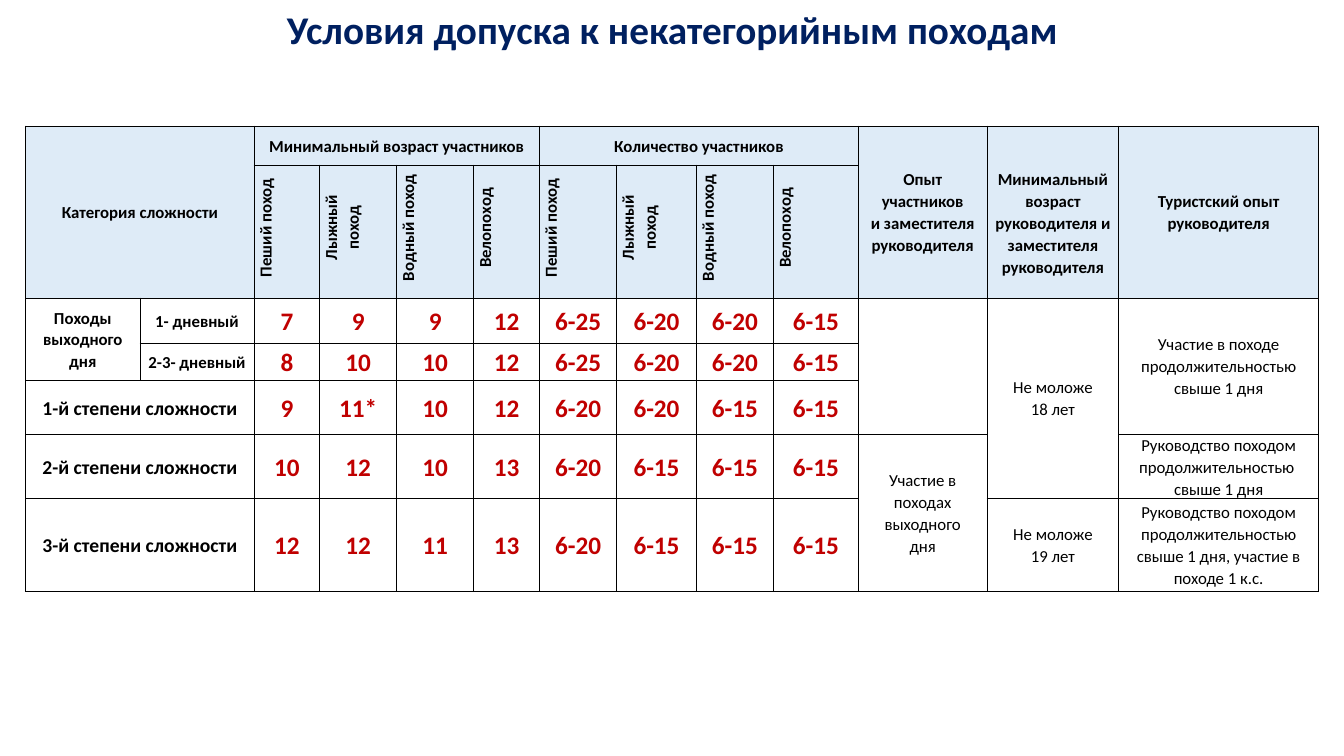
from lxml import etree
from pptx import Presentation
from pptx import util as u
from pptx.dml.color import RGBColor
from pptx.enum import text
from pptx.oxml import ns

NAVY = RGBColor(0x00, 0x20, 0x60)
BLACK = RGBColor(0x00, 0x00, 0x00)
RED = RGBColor(0xC0, 0x00, 0x00)
PALE_BLUE = RGBColor(0xDE, 0xEB, 0xF7)

# Text formats
TITLE = {"name": "Calibri", "size": u.Pt(28), "bold": True}
HEADING = {"name": "Calibri", "size": u.Pt(12), "bold": True}
DEGREE = {**HEADING, "size": u.Pt(14)}
NUMBER = {**HEADING, "size": u.Pt(18)}
NOTE = {**HEADING, "bold": False}

COLUMN_WIDTHS = [81.6, 81.6, 46.8, 55, 55, 47.1, 55, 57.1, 55, 60.7, 91.8, 94.3, 142.5]
ROW_HEIGHTS = [28, 95, 32.4, 26.7, 38.1, 45.4, 66.2]
HEADER_ROWS = 2
FIRST_NUMBER_COLUMN = 2

# Row, column, row span, column span, text (\n: paragraph, \v: line break)
HEADINGS = [
    (0, 0, 2, 2, "Категория сложности"),
    (0, 2, 1, 4, "Минимальный возраст участников"),
    (0, 6, 1, 4, "Количество участников"),
    (0, 10, 2, 1, "Опыт участников\nи заместителя руководителя"),
    (0, 11, 2, 1, "Минимальный возраст руководителя и заместителя руководителя"),
    (0, 12, 2, 1, "Туристский опыт\nруководителя"),
    (2, 0, 2, 1, "Походы выходного дня"),
    (2, 1, 1, 1, "1- дневный"),
    (3, 1, 1, 1, "2-3- дневный"),
]
NOTES = [
    (2, 10, 3, 1, ""),
    (2, 11, 4, 1, "Не моложе\n18 лет"),
    (2, 12, 3, 1, "Участие в походе продолжительностью свыше 1 дня"),
    (5, 10, 2, 1, "Участие в\nпоходах\nвыходного\nдня"),
    (5, 12, 1, 1, "Руководство походом продолжительностью \vсвыше 1 дня"),
    (6, 11, 1, 1, "Не моложе\n19 лет"),
    (6, 12, 1, 1, "Руководство походом продолжительностью свыше 1 дня, "
                  "участие в походе 1 к.с."),
]
HIKE_TYPES = ["Пеший поход", "Лыжный поход", "Водный поход", "Велопоход"]
NUMBERS = [
    ["7", "9", "9", "12", "6-25", "6-20", "6-20", "6-15"],
    ["8", "10", "10", "12", "6-25", "6-20", "6-20", "6-15"],
    ["9", "11*", "10", "12", "6-20", "6-20", "6-15", "6-15"],
    ["10", "12", "10", "13", "6-20", "6-15", "6-15", "6-15"],
    ["12", "12", "11", "13", "6-20", "6-15", "6-15", "6-15"],
]


def write(frame, content, font_format, color, line_spacing=None):
    frame.text = content
    for paragraph in frame.paragraphs:
        paragraph.alignment = text.PP_ALIGN.CENTER
        paragraph.line_spacing = line_spacing
        for run in paragraph.runs:
            for name, value in font_format.items():
                setattr(run.font, name, value)
            run.font.color.rgb = color


def add_title(slide, content):
    box = slide.shapes.add_textbox(0, 0, u.Pt(960), u.Pt(39))
    box.text_frame.word_wrap = True
    write(box.text_frame, content, TITLE, NAVY)


def add_borders(cell):
    properties = cell._tc.get_or_add_tcPr()
    for side in ("a:lnL", "a:lnR", "a:lnT", "a:lnB"):
        line = etree.SubElement(properties, ns.qn(side), w=str(u.Pt(0.75)))
        fill = etree.SubElement(line, ns.qn("a:solidFill"))
        etree.SubElement(fill, ns.qn("a:srgbClr"), val=str(BLACK))


def add_grid(slide):
    table = slide.shapes.add_table(
        len(ROW_HEIGHTS), len(COLUMN_WIDTHS), u.Pt(18.4), u.Pt(90),
        u.Pt(sum(COLUMN_WIDTHS)), u.Pt(sum(ROW_HEIGHTS))).table
    table.first_row = table.horz_banding = False
    for column, width in zip(table.columns, COLUMN_WIDTHS):
        column.width = u.Pt(width)
    layout = {"margin_left": u.Pt(4.5), "margin_right": u.Pt(4.5),
              "margin_top": 0, "margin_bottom": 0,
              "vertical_anchor": text.MSO_ANCHOR.MIDDLE}
    for index, (row, height) in enumerate(zip(table.rows, ROW_HEIGHTS)):
        row.height = u.Pt(height)
        for cell in row.cells:
            for name, value in layout.items():
                setattr(cell, name, value)
            add_borders(cell)
            if index < HEADER_ROWS:
                cell.fill.solid()
                cell.fill.fore_color.rgb = PALE_BLUE
            else:
                cell.fill.background()
    return table


def fill_cell(table, row, column, content, font_format, color=BLACK, rows=1, columns=1):
    cell = table.cell(row, column)
    if rows * columns > 1:
        cell.merge(table.cell(row + rows - 1, column + columns - 1))
    write(cell.text_frame, content, font_format, color, 1.07)
    return cell


def add_rotated_heading(table, column, content):
    cell = fill_cell(table, 1, column, content, HEADING)
    cell._tc.get_or_add_tcPr().set("vert", "vert270")
    for paragraph in cell.text_frame.paragraphs:
        paragraph._p.get_or_add_pPr().set("marL", str(u.Pt(5.65)))


def main():
    presentation = Presentation()
    presentation.slide_width, presentation.slide_height = u.Pt(960), u.Pt(540)
    slide = presentation.slides.add_slide(presentation.slide_layouts[6])
    add_title(slide, "Условия допуска к некатегорийным походам")
    table = add_grid(slide)

    # Headings and conditions
    for cells, font_format in ((HEADINGS, HEADING), (NOTES, NOTE)):
        for row, column, rows, columns, content in cells:
            fill_cell(table, row, column, content, font_format, rows=rows, columns=columns)
    table.cell(0, 11).margin_top = u.Pt(15.7)
    for degree in (1, 2, 3):
        fill_cell(table, degree + 3, 0, f"{degree}-й степени сложности", DEGREE, columns=2)

    # Hike types, ages and group sizes
    for column, content in enumerate(HIKE_TYPES * 2, FIRST_NUMBER_COLUMN):
        add_rotated_heading(table, column, content)
    for row, values in enumerate(NUMBERS, HEADER_ROWS):
        for column, value in enumerate(values, FIRST_NUMBER_COLUMN):
            fill_cell(table, row, column, value, NUMBER, RED)

    presentation.save("out.pptx")


if __name__ == "__main__":
    main()
